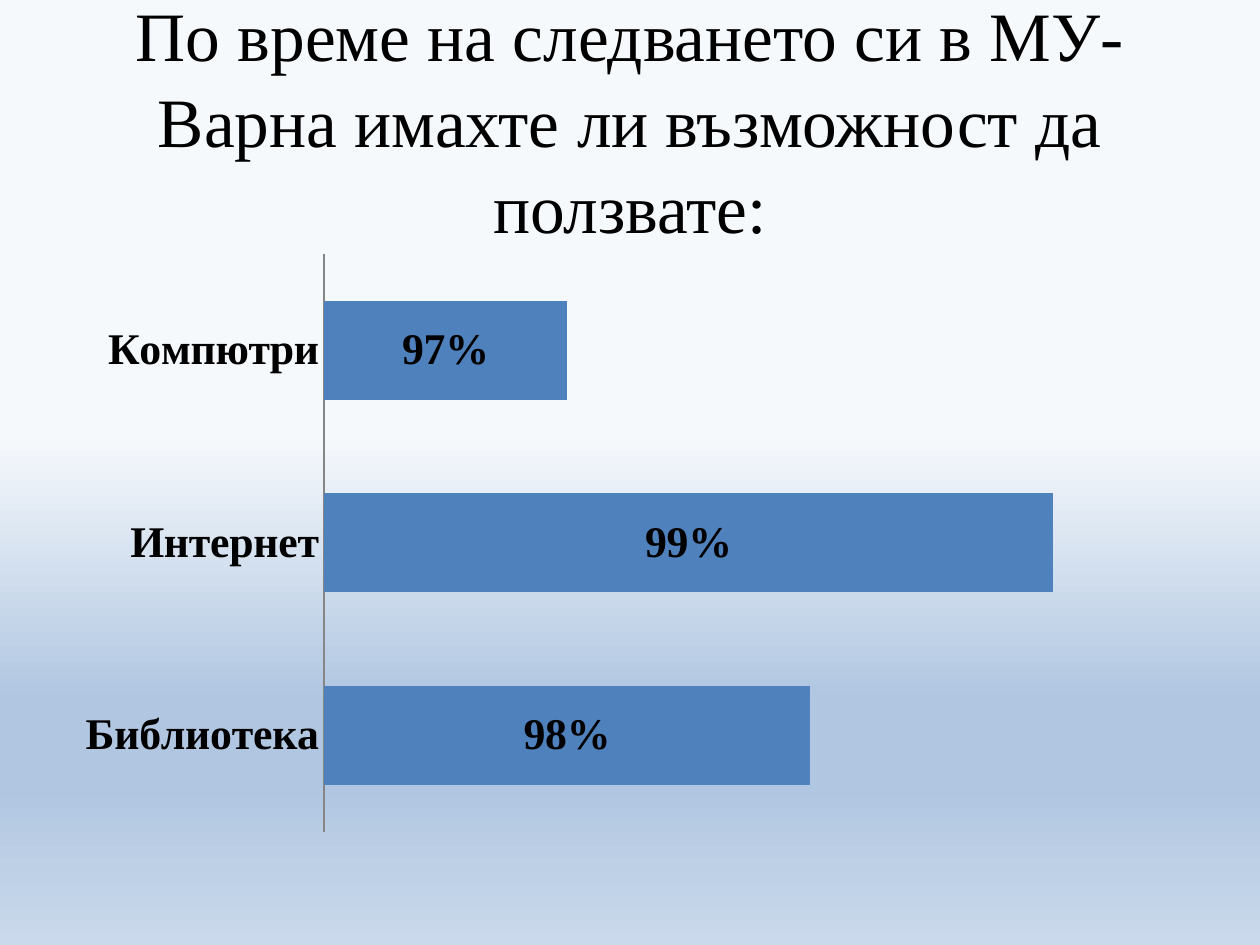
from copy import deepcopy

from pptx import Presentation, util as u
from pptx.chart.data import CategoryChartData
from pptx.dml.color import RGBColor
from pptx.enum import chart as ch, text

COLORS = {"text": "000000", "bar": "4F81BD", "axis": "868686",
          "sky": "F6F9FC", "band": "B0C6E1", "ground": "CAD9EB"}


class SlideBuilder:
    """Holds the style and the current slide; boxes are shares of its size."""
    font = "Times New Roman"

    def __init__(self, prs):
        self.prs = prs
        self.s = prs.slides.add_slide(prs.slide_layouts[6])

    def color(self, name):
        return RGBColor.from_string(COLORS[name])

    def box(self, x, y, w, h):
        W, H = self.prs.slide_width, self.prs.slide_height
        return int(x * W), int(y * H), int(w * W), int(h * H)

    def style(self, font, size, bold=False):
        font.name, font.size, font.bold = self.font, u.Pt(size), bold
        font.color.rgb = self.color("text")

    def background(self, stops):
        fill = self.s.background.fill
        fill.gradient()
        fill.gradient_angle = 270
        gs_list = self.s.element.xpath(".//p:bg//a:gsLst")[0]
        for gs in gs_list[1:]:
            gs_list.remove(gs)
        for _ in stops[1:]:
            gs_list.append(deepcopy(gs_list[0]))
        for stop, (position, name) in zip(fill.gradient_stops, stops):
            stop.position = position
            stop.color.rgb = self.color(name)

    def title(self, words, box, size):
        tf = self.s.shapes.add_textbox(*self.box(*box)).text_frame
        tf.word_wrap = True
        tf.vertical_anchor = text.MSO_ANCHOR.MIDDLE
        p = tf.paragraphs[0]
        p.text = words
        p.alignment = text.PP_ALIGN.CENTER
        p.line_spacing = 1.04
        self.style(p.font, size)

    def bar_chart(self, values, box, size, low, high):
        data = CategoryChartData(number_format="0%")
        data.categories = list(values)
        data.add_series("Series 1", list(values.values()))
        chart = self.s.shapes.add_chart(
            ch.XL_CHART_TYPE.BAR_STACKED, *self.box(*box), data).chart
        chart.has_legend = chart.has_title = False
        self.style(chart.font, 18)

        # Axes
        cat, val = chart.category_axis, chart.value_axis
        cat.major_tick_mark = ch.XL_TICK_MARK.NONE
        cat.format.line.color.rgb = self.color("axis")
        cat.format.line.width = u.Pt(0.75)
        self.style(cat.tick_labels.font, size, True)
        val.visible = val.has_major_gridlines = False
        val.minimum_scale, val.maximum_scale = low, high

        # Bars and their labels
        plot = chart.plots[0]
        plot.gap_width, plot.overlap = 95, 100
        plot.vary_by_categories = False
        series = plot.series[0]
        series.format.fill.solid()
        series.format.fill.fore_color.rgb = self.color("bar")
        labels = series.data_labels
        labels.show_value = True
        labels.number_format, labels.number_format_is_linked = "0%", False
        labels.position = ch.XL_LABEL_POSITION.CENTER
        self.style(labels.font, size, True)


def main():
    prs = Presentation()
    prs.slide_width, prs.slide_height = u.Inches(10), u.Inches(7.5)
    slide = SlideBuilder(prs)
    slide.background([(0.46, "sky"), (0.74, "band"), (0.83, "band"), (1, "ground")])
    slide.title("По време на следването си в МУ-Варна имахте ли възможност да ползвате:",
                (0.05, 0.04, 0.9, 0.17), 39.6)
    slide.bar_chart({"Библиотека": 0.98, "Интернет": 0.99, "Компютри": 0.97},
                    (0.05, 0.256, 0.9, 0.637), 25, 0.96, 0.995)
    prs.save("out.pptx")


if __name__ == "__main__":
    main()
